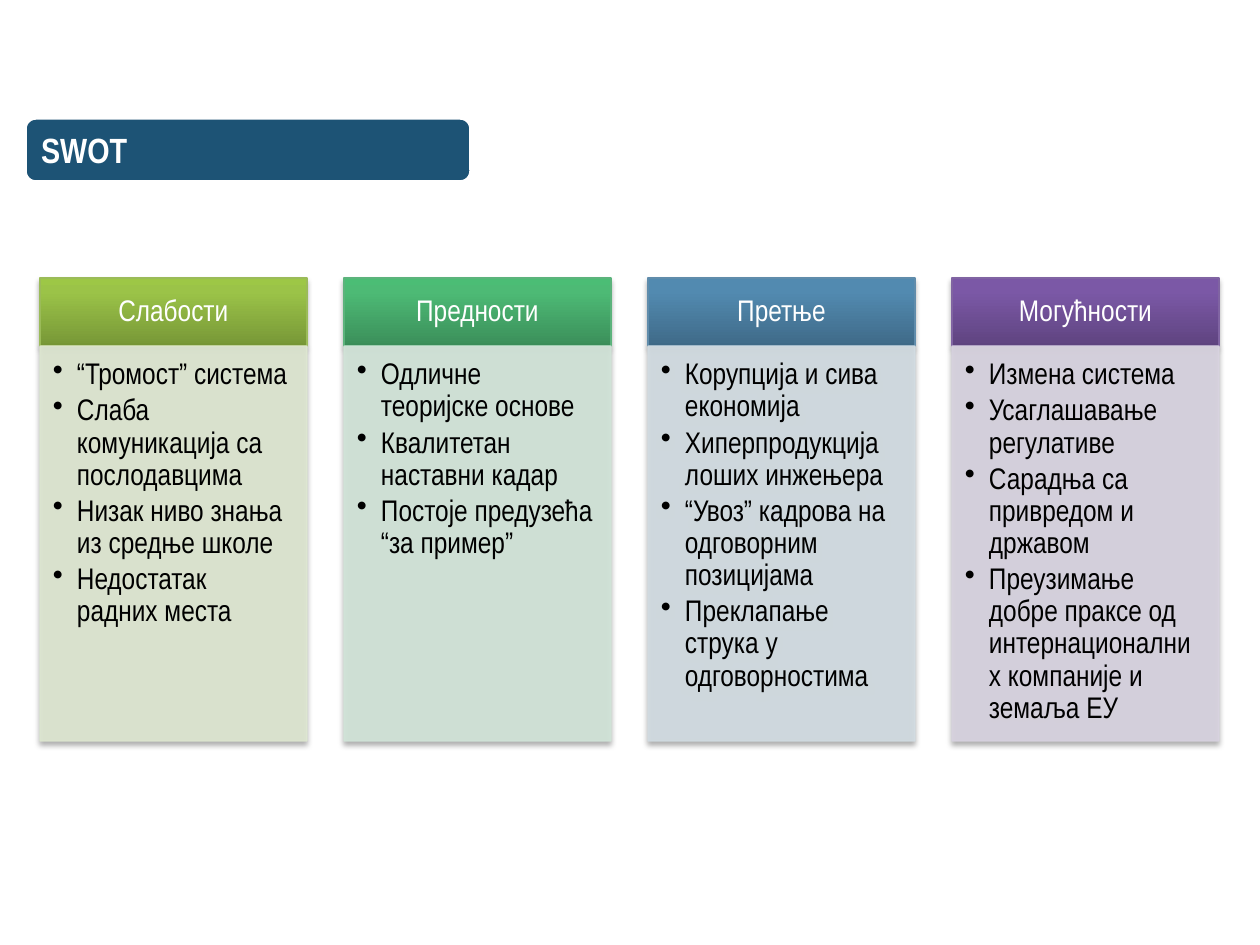
from lxml.etree import SubElement
from pptx import Presentation
from pptx.dml.color import RGBColor
from pptx.enum.shapes import MSO_SHAPE as Shape
from pptx.enum.text import MSO_ANCHOR as Anchor, PP_ALIGN as Align
from pptx.oxml import parse_xml
from pptx.oxml.ns import nsdecls, qn
from pptx.util import Pt

# Content: heading, points, header gradient (bottom to top), header line, body
TITLE = "SWOT"
COLUMNS = [
    ("Слабости",
     ["“Тромост” система", "Слаба комуникација са послодавцима",
      "Низак ниво знања из средње школе", "Недостатак радних места"],
     ("779737", "9BC348", "9DC746"), "9BBB59", "DEE7D1"),
    ("Предности",
     ["Одличне теоријске основе", "Квалитетан наставни кадар",
      "Постоје предузећа “за пример”"],
     ("3B8F5A", "4DBA75", "4BBD75"), "5CB37C", "D2E5D9"),
    ("Претње",
     ["Корупција и сива економија", "Хиперпродукција лоших инжењера",
      "“Увоз” кадрова на одговорним позицијама",
      "Преклапање струка у одговорностима"],
     ("3F6A88", "528AB0", "518BB3"), "608CAB", "D2DCE2"),
    ("Могућности",
     ["Измена система", "Усаглашавање регулативе",
      "Сарадња са привредом и државом",
      "Преузимање добре праксе од интернационалних компаније и земаља ЕУ"],
     ("5F4480", "7B58A6", "7C57A8"), "8064A2", "D8D3E0"),
]
COLORS = {"banner": "1D5375", "white": "FFFFFF", "black": "000000"}
STOPS = (0, 80, 100)
FONT = "Arial Narrow"

# Layout in px, 126 to the inch
LEFT, PITCH, WIDTH = 40, 304, 267
TOP, HEADER_HEIGHT, BODY_HEIGHT = 278, 68, 395
INDENT = 24


def px(value):
    return round(value * 914400 / 126)


def add_box(slide, kind, box, fill, line, line_width, insets, anchor):
    shape = slide.shapes.add_shape(kind, *map(px, box))
    shape.shadow.inherit = False
    shape.fill.solid()
    shape.fill.fore_color.rgb = RGBColor.from_string(fill)
    shape.line.color.rgb = RGBColor.from_string(line)
    shape.line.width = Pt(line_width)
    frame = shape.text_frame
    frame.word_wrap = True
    frame.vertical_anchor = anchor
    (frame.margin_left, frame.margin_top,
     frame.margin_right, frame.margin_bottom) = map(px, insets)
    return shape


def write(paragraph, text, size, color, align, bold=False):
    paragraph.text = text
    paragraph.alignment = align
    paragraph.font.name = FONT
    paragraph.font.size = Pt(size)
    paragraph.font.bold = bold
    paragraph.font.color.rgb = RGBColor.from_string(COLORS[color])


def add_shadow(shape):
    effects = shape._element.spPr.find(qn("a:effectLst"))
    effects.append(parse_xml(
        f'<a:outerShdw {nsdecls("a")} blurRad="{Pt(3.1)}" dist="{Pt(1.8)}" '
        'dir="5400000" rotWithShape="0"><a:srgbClr val="000000">'
        '<a:alpha val="35000"/></a:srgbClr></a:outerShdw>'))


def set_gradient(shape, colors):
    stops = "".join(
        f'<a:gs pos="{stop * 1000}"><a:srgbClr val="{color}"/></a:gs>'
        for stop, color in zip(STOPS, colors))
    properties = shape._element.spPr
    properties.replace(properties.find(qn("a:solidFill")), parse_xml(
        f'<a:gradFill {nsdecls("a")} rotWithShape="1"><a:gsLst>{stops}</a:gsLst>'
        '<a:lin ang="16200000" scaled="0"/></a:gradFill>'))


def set_opacity(shape, percent):
    for color in shape._element.spPr.iter(qn("a:srgbClr")):
        SubElement(color, qn("a:alpha"), val=str(percent * 1000))


def add_bullet(paragraph):
    properties = paragraph._p.get_or_add_pPr()
    properties.set("marL", str(px(INDENT)))
    properties.set("indent", str(-px(INDENT)))
    SubElement(properties, qn("a:buChar"), char="•")


presentation = Presentation()
presentation.slide_width, presentation.slide_height = px(1260), px(945)
slide = presentation.slides.add_slide(presentation.slide_layouts[6])

# Title banner
banner = add_box(slide, Shape.ROUNDED_RECTANGLE, (25, 118, 446, 64),
                 COLORS["banner"], COLORS["white"], 2, (13, 6, 13, 6), Anchor.MIDDLE)
write(banner.text_frame.paragraphs[0], TITLE, 20, "white", Align.LEFT, bold=True)

# Four columns, each a header over a bulleted body
for index, (heading, points, gradient, line, tint) in enumerate(COLUMNS):
    left = LEFT + index * PITCH
    header = add_box(slide, Shape.RECTANGLE, (left, TOP, WIDTH, HEADER_HEIGHT),
                     gradient[-1], line, 0.75, (16, 10, 16, 10), Anchor.MIDDLE)
    set_gradient(header, gradient)
    add_shadow(header)
    paragraph = header.text_frame.paragraphs[0]
    write(paragraph, heading, 17, "white", Align.CENTER)
    paragraph.line_spacing = 0.9

    body = add_box(slide, Shape.RECTANGLE,
                   (left, TOP + HEADER_HEIGHT, WIDTH, BODY_HEIGHT),
                   tint, tint, 0.75, (13, 13, 16, 19), Anchor.TOP)
    set_opacity(body, 90)
    add_shadow(body)
    frame = body.text_frame
    for number, point in enumerate(points):
        paragraph = frame.add_paragraph() if number else frame.paragraphs[0]
        add_bullet(paragraph)
        write(paragraph, point, 17, "black", Align.LEFT)
        paragraph.line_spacing = 0.9
        paragraph.space_after = Pt(2.3)

presentation.save("out.pptx")
